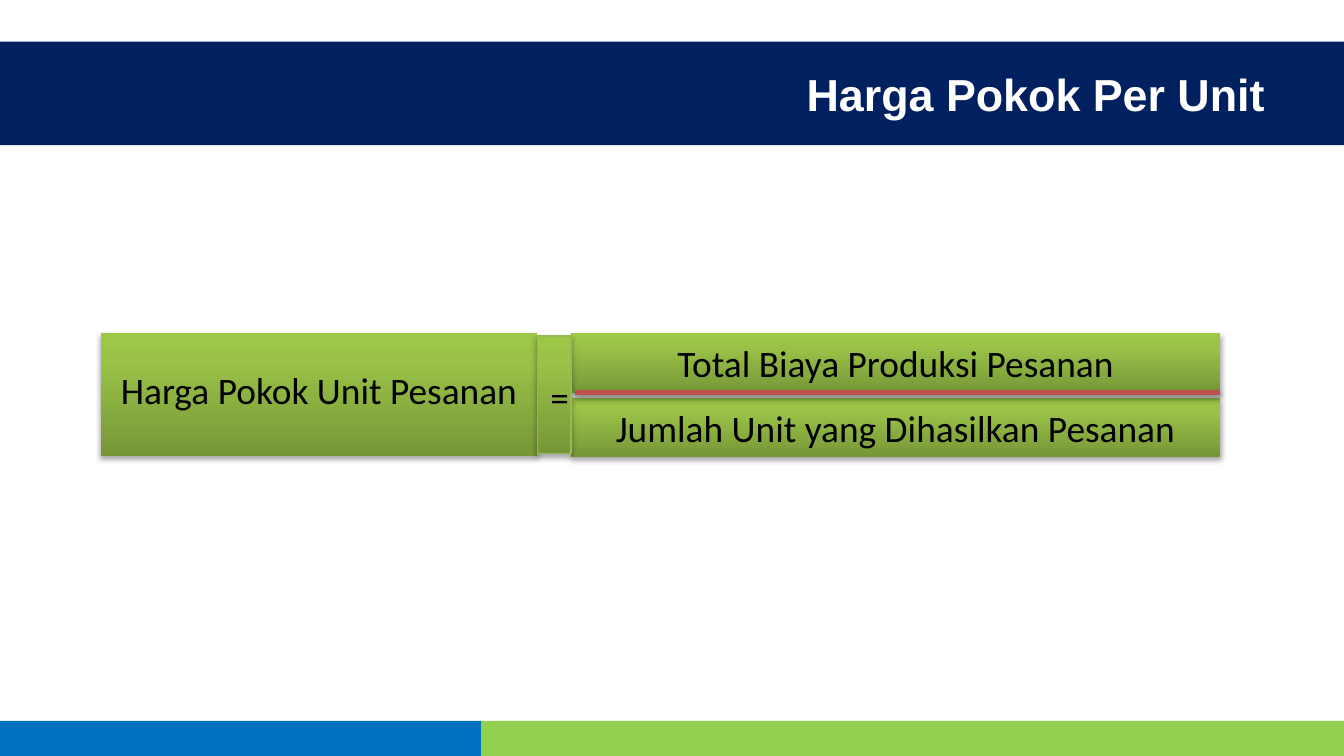
from lxml import etree
from pptx import Presentation, util as u
from pptx.dml.color import RGBColor
from pptx.enum import shapes, text
from pptx.oxml import ns

WIDTH = 10
HEIGHT = WIDTH * 9 / 16
GREENS = ((0, "779737"), (80, "9BC348"), (100, "9DC746"))


def colour(value):
    """Turn a hex string into a colour."""
    return RGBColor.from_string(value)


def add_node(parent, tag, **values):
    """Append a DrawingML element with the given attributes."""
    return etree.SubElement(parent, ns.qn("a:" + tag), {key: str(value) for key, value in values.items()})


def add_shadow(shape):
    """Cast a soft shadow straight down."""
    effects = add_node(shape._element.spPr, "effectLst")
    shadow = add_node(effects, "outerShdw", blurRad=u.Pt(3.1), dist=u.Pt(1.8), dir=5400000, rotWithShape=0)
    add_node(add_node(shadow, "srgbClr", val="000000"), "alpha", val=35000)


def fill_gradient(shape):
    """Shade a shape green, darkest at its foot."""
    properties = shape._element.spPr
    gradient = add_node(properties, "gradFill", rotWithShape=1)
    stops = add_node(gradient, "gsLst")
    for share, value in GREENS:
        add_node(add_node(stops, "gs", pos=share * 1000), "srgbClr", val=value)
    add_node(gradient, "lin", ang=16200000, scaled=0)
    properties.insert(2, gradient)


def write(shape, words, size, font, value, align, bold=False):
    """Write one line of text, centred vertically."""
    frame = shape.text_frame
    frame.word_wrap = True
    frame.auto_size = text.MSO_AUTO_SIZE.NONE
    frame.vertical_anchor = text.MSO_ANCHOR.MIDDLE
    para = frame.paragraphs[0]
    para.alignment = align
    span = para.add_run()
    span.text = words
    span.font.size, span.font.name, span.font.bold = u.Pt(size), font, bold
    span.font.color.rgb = colour(value)


def add_box(page, left, top, width, height):
    """Add a borderless rectangle."""
    box = page.shapes.add_shape(shapes.MSO_SHAPE.RECTANGLE, *map(u.Inches, (left, top, width, height)))
    box.line.fill.background()
    return box


def add_band(page, value, *place):
    """Add a flat coloured band."""
    band = add_box(page, *place)
    band.shadow.inherit = False
    band.fill.solid()
    band.fill.fore_color.rgb = colour(value)


def add_term(page, words, *place, border=None):
    """Add one shaded term of the formula."""
    term = add_box(page, *place)
    fill_gradient(term)
    if border:
        term.line.color.rgb = colour(border)
        term.line.width = u.Pt(0.75)
    add_shadow(term)
    write(term, words, 20, "Calibri", "000000", text.PP_ALIGN.CENTER)
    return term


def add_header(page, left, top, width, height):
    """Place the title on a dark band."""
    add_band(page, "002060", left, top, width, height)
    title = page.shapes.title
    title.left, title.top, title.width, title.height = map(
        u.Inches, (left + 0.166 * width, top, 0.785 * width, height))
    write(title, "Harga Pokok Per Unit", 24, "Arial", "FFFFFF", text.PP_ALIGN.RIGHT, True)
    page.shapes._spTree.append(title._element)


def add_footer(page, left, top, width, height):
    """Split the foot of the page into two colours."""
    split = 0.358 * width
    add_band(page, "0070C0", left, top, split, height)
    add_band(page, "92D050", left + split, top, width - split, height)


def add_formula(page, left, top, width, height):
    """Set the unit cost equal to a fraction."""
    sign_left, right = left + 0.39 * width, left + width
    sign_width, row = 0.03 * width, 0.48 * height
    over_left = sign_left + sign_width
    over_width = right - over_left
    add_term(page, "Jumlah Unit yang Dihasilkan Pesanan", over_left, top + height - row, over_width, row)
    result = add_term(page, "Harga Pokok Unit Pesanan", left, top, sign_left - left, 0.99 * height)
    result.text_frame.margin_bottom = u.Inches(0.13)
    add_term(page, "Total Biaya Produksi Pesanan", over_left, top, over_width, row)
    bar_top = top + row
    bar = page.shapes.add_connector(
        shapes.MSO_CONNECTOR.STRAIGHT, *map(u.Inches, (over_left + 0.03, bar_top, right, bar_top)))
    bar.line.color.rgb = colour("C0504D")
    bar.line.width = u.Pt(3)
    add_shadow(bar)
    sign = add_term(page, "=", sign_left, top + 0.02, sign_width, 0.95 * height, border="98B955")
    frame = sign.text_frame
    frame.margin_left, frame.margin_right = u.Inches(0.08), 0
    frame.margin_top = u.Inches(0.08)


def main():
    """Build and save the deck."""
    deck = Presentation()
    deck.slide_width, deck.slide_height = u.Inches(WIDTH), u.Inches(HEIGHT)
    page = deck.slides.add_slide(deck.slide_layouts[5])
    add_footer(page, 0, HEIGHT - 0.26, WIDTH, 0.26)
    add_header(page, 0, 0.31, WIDTH, 0.77)
    add_formula(page, 0.75, 2.48, 8.33, 0.92)
    deck.save("out.pptx")


if __name__ == "__main__":
    main()
